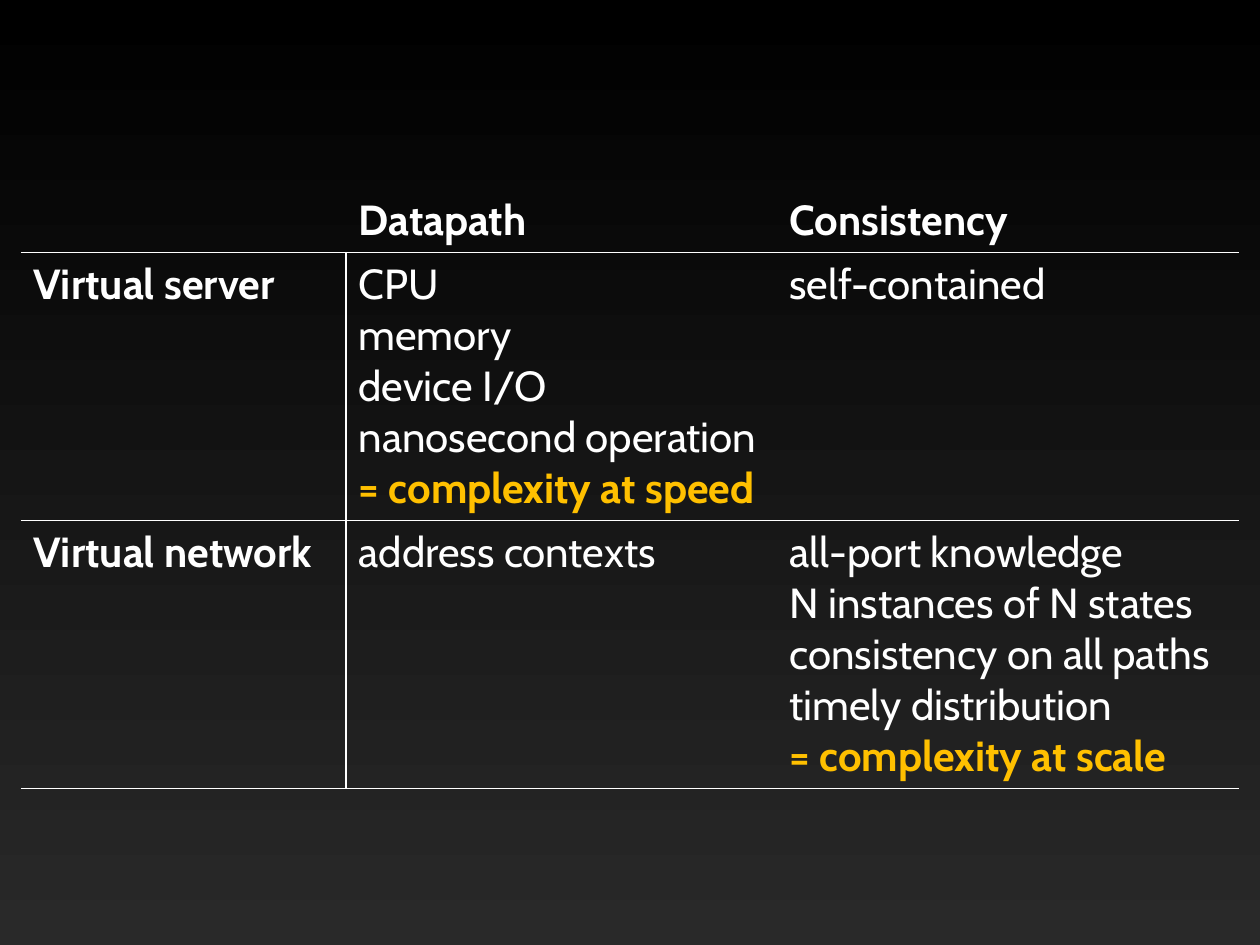
from lxml import etree
from pptx import Presentation
from pptx.dml.color import RGBColor
from pptx.oxml import ns
from pptx.util import Pt

BLACK = RGBColor(0x00, 0x00, 0x00)
CHARCOAL = RGBColor(0x29, 0x29, 0x29)
WHITE = RGBColor(0xFF, 0xFF, 0xFF)
AMBER = RGBColor(0xFF, 0xC0, 0x00)

COLUMN_WIDTHS = (185.75, 246.25, 264.25)
ROW_HEIGHTS = (36, 153, 153)
ROWS = [
    ([], ["Datapath"], ["Consistency"]),
    (
        ["Virtual server"],
        ["CPU", "memory", "device I/O", "nanosecond operation",
         "= complexity at speed"],
        ["self-contained"],
    ),
    (
        ["Virtual network"],
        ["address contexts"],
        ["all-port knowledge", "N instances of N states",
         "consistency on all paths", "timely distribution",
         "= complexity at scale"],
    ),
]


def fill_background(slide):
    fill = slide.background.fill
    fill.gradient()
    fill.gradient_angle = 270
    for stop, position, color in zip(fill.gradient_stops, (0, 1), (BLACK, CHARCOAL)):
        stop.position = position
        stop.color.rgb = color


def set_borders(cell, visible_sides):
    """Draw a thin white line on the given sides (of L, R, T, B), none elsewhere."""
    properties = cell._tc.get_or_add_tcPr()
    for side in "LRTB":
        line = etree.SubElement(properties, ns.qn(f"a:ln{side}"), w=str(Pt(1)))
        if side in visible_sides:
            fill = etree.SubElement(line, ns.qn("a:solidFill"))
            etree.SubElement(fill, ns.qn("a:srgbClr"), val=str(WHITE))
        else:
            etree.SubElement(line, ns.qn("a:noFill"))


def write_lines(cell, lines, is_heading):
    cell.text = "\n".join(lines)
    for paragraph in cell.text_frame.paragraphs:
        is_conclusion = paragraph.text.startswith("=")
        font = paragraph.font
        font.name = "Cabin"
        font.size = Pt(24)
        font.bold = is_heading or is_conclusion
        font.color.rgb = AMBER if is_conclusion else WHITE


def add_comparison_table(slide, left, top):
    frame = slide.shapes.add_table(
        len(ROWS), len(COLUMN_WIDTHS), left, top,
        Pt(sum(COLUMN_WIDTHS)), Pt(sum(ROW_HEIGHTS)),
    )
    table = frame.table
    table.first_row = False
    table.horz_banding = False
    for column, width in zip(table.columns, COLUMN_WIDTHS):
        column.width = Pt(width)
    for row, height in zip(table.rows, ROW_HEIGHTS):
        row.height = Pt(height)

    for row_index, row in enumerate(ROWS):
        for column_index, lines in enumerate(row):
            cell = table.cell(row_index, column_index)
            sides = "B"
            if row_index > 0:
                sides += "T" + {0: "R", 1: "L"}.get(column_index, "")
            set_borders(cell, sides)
            cell.fill.background()
            write_lines(cell, lines, row_index == 0 or column_index == 0)


def main():
    presentation = Presentation()
    presentation.slide_width = Pt(720)
    presentation.slide_height = Pt(540)
    slide = presentation.slides.add_slide(presentation.slide_layouts[6])
    fill_background(slide)
    add_comparison_table(slide, Pt(12), Pt(108))
    presentation.save("out.pptx")


if __name__ == "__main__":
    main()
